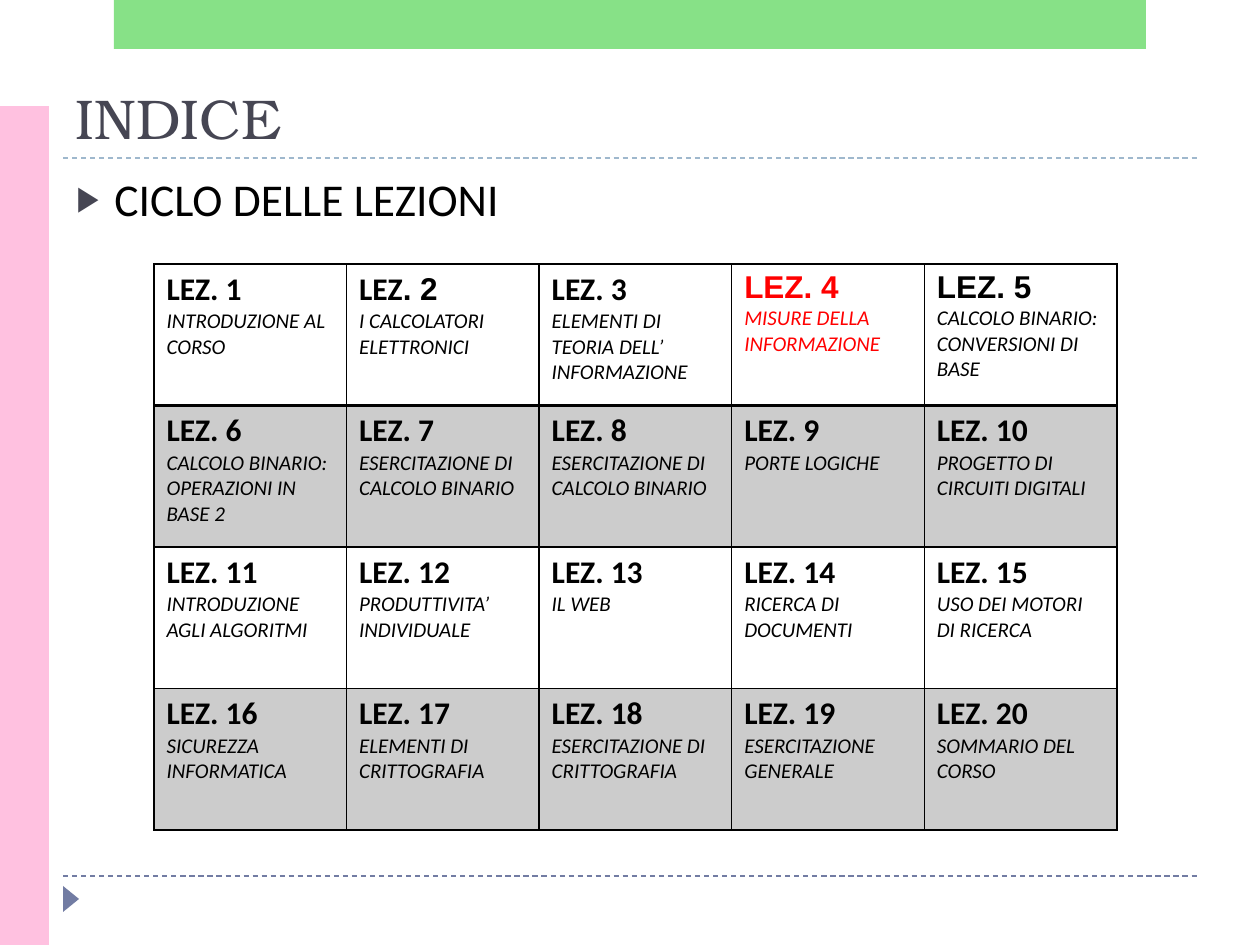
"""Build the course index slide with its table of twenty lessons."""
import copy
import dataclasses

import pptx
import pptx.dml.color
import pptx.enum.dml
import pptx.enum.shapes
import pptx.enum.text
import pptx.oxml
import pptx.oxml.ns
import pptx.util

qn = pptx.oxml.ns.qn
SHAPES = pptx.enum.shapes.MSO_SHAPE
COLUMNS = 5
LESSONS = [
    "INTRODUZIONE AL CORSO",
    "I CALCOLATORI \nELETTRONICI",
    "ELEMENTI DI TEORIA DELL’\nINFORMAZIONE",
    "MISURE DELLA INFORMAZIONE",
    "CALCOLO BINARIO: CONVERSIONI DI BASE",
    "CALCOLO BINARIO: OPERAZIONI IN BASE 2",
    "ESERCITAZIONE DI CALCOLO BINARIO",
    "ESERCITAZIONE DI CALCOLO BINARIO",
    "PORTE LOGICHE",
    "PROGETTO DI CIRCUITI DIGITALI",
    "INTRODUZIONE AGLI ALGORITMI",
    "PRODUTTIVITA’ INDIVIDUALE",
    "IL WEB",
    "RICERCA DI DOCUMENTI",
    "USO DEI MOTORI DI RICERCA",
    "SICUREZZA INFORMATICA",
    "ELEMENTI DI CRITTOGRAFIA",
    "ESERCITAZIONE DI CRITTOGRAFIA",
    "ESERCITAZIONE GENERALE",
    "SOMMARIO DEL CORSO",
]
CURRENT_LESSON = 4


@dataclasses.dataclass(frozen=True)
class Theme:
    text: str = "000000"
    title: str = "464653"
    current: str = "FF0000"
    accent: str = "727CA3"
    title_rule: str = "9FB8CD"
    side_bar: str = "FFC1E0"
    top_bar: str = "62D862"
    title_font: str = "TeX Gyre Bonum"
    body_font: str = "Calibri"
    number_font: str = "Arial"
    title_size: int = 32
    body_size: int = 26
    lesson_size: int = 18
    topic_size: int = 12


def px(*lengths):
    return [pptx.util.Emu(round(length * 914400 / 126)) for length in lengths]


def rgb(color):
    return pptx.dml.color.RGBColor.from_string(color)


def set_attributes(target, values):
    for name, value in values.items():
        setattr(target, name, value)


def set_fill(fill, element, color, alpha=100):
    fill.solid()
    fill.fore_color.rgb = rgb(color)
    if alpha < 100:
        color_element = element.find(qn("a:solidFill")).find(qn("a:srgbClr"))
        color_element.append(xml(f'<a:alpha {{ns}} val="{alpha * 1000}"/>'))


def xml(markup):
    return pptx.oxml.parse_xml(markup.format(ns=pptx.oxml.ns.nsdecls("a")))


class SlideBuilder:
    def __init__(self, slide, theme):
        self.slide = slide
        self.theme = theme

    def style(self, run, size, font, color, **values):
        set_attributes(run.font, {"size": pptx.util.Pt(size), "name": font, **values})
        run.font.color.rgb = rgb(color)

    def add_run(self, paragraph, text, *style, **values):
        run = paragraph.add_run()
        run.text = text
        self.style(run, *style, **values)

    def bar(self, kind, box, color, alpha=100, rotation=0):
        shape = self.slide.shapes.add_shape(kind, *px(*box))
        shape.shadow.inherit = False
        shape.rotation = rotation
        set_fill(shape.fill, shape._element.spPr, color, alpha)
        shape.line.fill.background()

    def rule(self, left, right, y, color):
        line = self.slide.shapes.add_connector(
            pptx.enum.shapes.MSO_CONNECTOR.STRAIGHT, *px(left, y, right, y))
        line.line.color.rgb = rgb(color)
        line.line.width = pptx.util.Pt(0.75)
        line.line.dash_style = pptx.enum.dml.MSO_LINE.DASH
        line._element.spPr.append(xml("<a:effectLst {ns}/>"))

    def title(self, box, text):
        title = self.slide.shapes.title
        set_attributes(title, dict(zip(("left", "top", "width", "height"), px(*box))))
        set_attributes(title.text_frame, {
            "auto_size": pptx.enum.text.MSO_AUTO_SIZE.NONE,
            "vertical_anchor": pptx.enum.text.MSO_ANCHOR.BOTTOM,
        })
        paragraph = title.text_frame.paragraphs[0]
        paragraph.alignment = pptx.enum.text.PP_ALIGN.LEFT
        theme = self.theme
        self.add_run(paragraph, text, theme.title_size, theme.title_font, theme.title)

    def bullet(self, box, text):
        frame = self.slide.shapes.add_textbox(*px(*box)).text_frame
        frame.word_wrap = True
        paragraph = frame.paragraphs[0]
        theme = self.theme
        properties = paragraph._p.get_or_add_pPr()
        indent = px(38)[0]
        properties.set("marL", str(indent))
        properties.set("indent", str(-indent))
        for markup in (
            f'<a:buClr {{ns}}><a:srgbClr val="{theme.title}"/></a:buClr>',
            '<a:buSzPct {ns} val="76000"/>',
            f'<a:buFont {{ns}} typeface="{theme.number_font}"/>',
            '<a:buChar {ns} char="▶"/>',
        ):
            properties.append(xml(markup))
        self.add_run(paragraph, text, theme.body_size, theme.body_font, theme.text)

    def borders(self, cell, widths):
        properties = cell._tc.get_or_add_tcPr()
        for side, width in widths.items():
            properties.append(xml(
                f'<a:ln{side} {{ns}} w="{pptx.util.Pt(width)}"><a:solidFill>'
                f'<a:srgbClr val="{self.theme.text}"/></a:solidFill></a:ln{side}>'))

    def lesson(self, cell, number, topic):
        theme = self.theme
        color = theme.current if number == CURRENT_LESSON else theme.text
        fonts = {2: (theme.body_font, theme.number_font),
                 4: (theme.number_font,) * 2, 5: (theme.number_font,) * 2}
        parts = zip(("LEZ", f". {number}"), fonts.get(number, (theme.body_font,) * 2))
        heading = cell.text_frame.paragraphs[0]
        for text, font in parts:
            self.add_run(heading, text, theme.lesson_size, font, color, bold=True)
        paragraph = cell.text_frame.add_paragraph()
        paragraph.text = topic
        for run in paragraph.runs:
            self.style(run, theme.topic_size, theme.body_font, color, italic=True)
        for line_break in paragraph._p.findall(qn("a:br")):
            line_break.append(copy.deepcopy(paragraph.runs[0]._r.rPr))

    def lesson_table(self, box, topics):
        rows = len(topics) // COLUMNS
        table = self.slide.shapes.add_table(rows, COLUMNS, *px(*box)).table
        set_attributes(table, {"first_row": False, "horz_banding": False})
        for index, topic in enumerate(topics):
            row, column = divmod(index, COLUMNS)
            cell = table.cell(row, column)
            self.lesson(cell, index + 1, topic)
            self.borders(cell, {"L": 1, "R": 1, "T": 2 if row == 1 else 1,
                                "B": 2 if row == 0 else 1})
            if row % 2:
                set_fill(cell.fill, cell._tc.tcPr, self.theme.text, 20)
            else:
                cell.fill.background()


def main():
    presentation = pptx.Presentation()
    presentation.slide_width, presentation.slide_height = px(1260, 945)
    slide = presentation.slides.add_slide(presentation.slide_layouts[5])
    theme = Theme()
    builder = SlideBuilder(slide, theme)
    builder.rule(63, 1197, 876, theme.accent)
    builder.rule(63, 1197, 158, theme.title_rule)
    builder.bar(SHAPES.ISOSCELES_TRIANGLE, (58, 891, 26, 16), theme.accent, rotation=90)
    builder.bar(SHAPES.RECTANGLE, (0, 106, 49, 839), theme.side_bar)
    builder.bar(SHAPES.RECTANGLE, (114, 0, 1032, 49), theme.top_bar, alpha=76)
    builder.title((63, 69, 1134, 88), "INDICE")
    builder.bullet((64, 165, 1134, 100), "CICLO DELLE LEZIONI")
    builder.lesson_table((154, 264, 963, 566), LESSONS)
    presentation.save("out.pptx")


if __name__ == "__main__":
    main()
